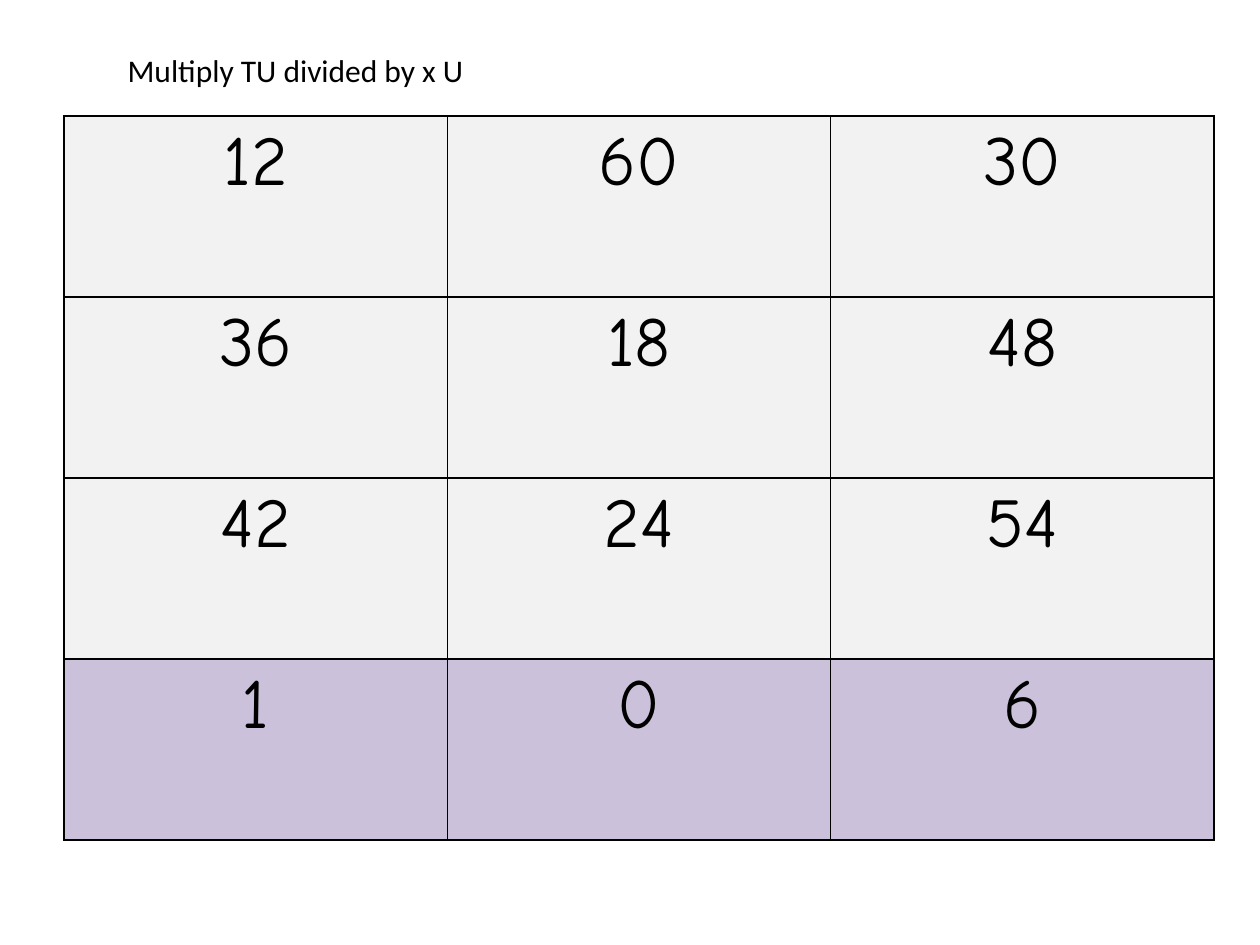
from dataclasses import dataclass

from lxml.etree import SubElement
from pptx import Presentation
from pptx.dml.color import RGBColor
from pptx.enum.text import MSO_ANCHOR, MSO_AUTO_SIZE, PP_ALIGN
from pptx.oxml.ns import qn
from pptx.util import Pt

EMU_PER_PX = 914400 / 126
TITLE_ONLY = 5


@dataclass(frozen=True)
class Theme:
    ink: RGBColor = RGBColor(0x00, 0x00, 0x00)
    number_fill: RGBColor = RGBColor(0xF2, 0xF2, 0xF2)
    last_row_fill: RGBColor = RGBColor(0xCC, 0xC1, 0xDA)
    title_font: str = "Calibri"
    number_font: str = "Comic Neue"
    title_size: int = 18
    number_size: int = 40
    border_width: int = 1


THEME = Theme()
TITLE = "Multiply TU divided by x U"
NUMBERS = [
    ["12", "60", "30"],
    ["36", "18", "48"],
    ["42", "24", "54"],
    ["1", "0", "6"],
]


def px(length):
    return round(length * EMU_PER_PX)


def add_run(paragraph, text, font_name, size):
    run = paragraph.add_run()
    run.text = text
    run.font.name = font_name
    run.font.size = Pt(size)
    run.font.color.rgb = THEME.ink


def set_borders(cell):
    """Draw all four cell edges; they must precede the fill in the XML."""
    properties = cell._tc.get_or_add_tcPr()
    for index, edge in enumerate(("a:lnL", "a:lnR", "a:lnT", "a:lnB")):
        line = SubElement(properties, qn(edge), w=str(Pt(THEME.border_width)))
        fill = SubElement(line, qn("a:solidFill"))
        SubElement(fill, qn("a:srgbClr"), val=str(THEME.ink))
        properties.insert(index, line)


def place_title(slide, left, top, width, height):
    title = slide.shapes.title
    title.left, title.top = px(left), px(top)
    title.width, title.height = px(width), px(height)
    frame = title.text_frame
    frame.word_wrap = False
    frame.auto_size = MSO_AUTO_SIZE.SHAPE_TO_FIT_TEXT
    frame.vertical_anchor = MSO_ANCHOR.TOP
    paragraph = frame.paragraphs[0]
    paragraph.alignment = PP_ALIGN.LEFT
    add_run(paragraph, TITLE, THEME.title_font, THEME.title_size)


def add_number_grid(slide, left, top, width, height):
    shape = slide.shapes.add_table(
        len(NUMBERS), len(NUMBERS[0]), px(left), px(top), px(width), px(height)
    )
    table = shape.table
    table.first_row = False
    table.horz_banding = False
    for row_index, row in enumerate(NUMBERS):
        is_last = row_index == len(NUMBERS) - 1
        for column_index, number in enumerate(row):
            cell = table.cell(row_index, column_index)
            cell.fill.solid()
            cell.fill.fore_color.rgb = (
                THEME.last_row_fill if is_last else THEME.number_fill
            )
            set_borders(cell)
            paragraph = cell.text_frame.paragraphs[0]
            paragraph.alignment = PP_ALIGN.CENTER
            add_run(paragraph, number, THEME.number_font, THEME.number_size)


def main():
    presentation = Presentation()
    presentation.slide_width, presentation.slide_height = px(1260), px(945)
    slide = presentation.slides.add_slide(presentation.slide_layouts[TITLE_ONLY])

    # Heading above the grid
    place_title(slide, 115, 45, 382, 50)
    # Grid of numbers, with the last row picked out
    add_number_grid(slide, 64, 116, 1150, 724)

    presentation.save("out.pptx")


if __name__ == "__main__":
    main()
